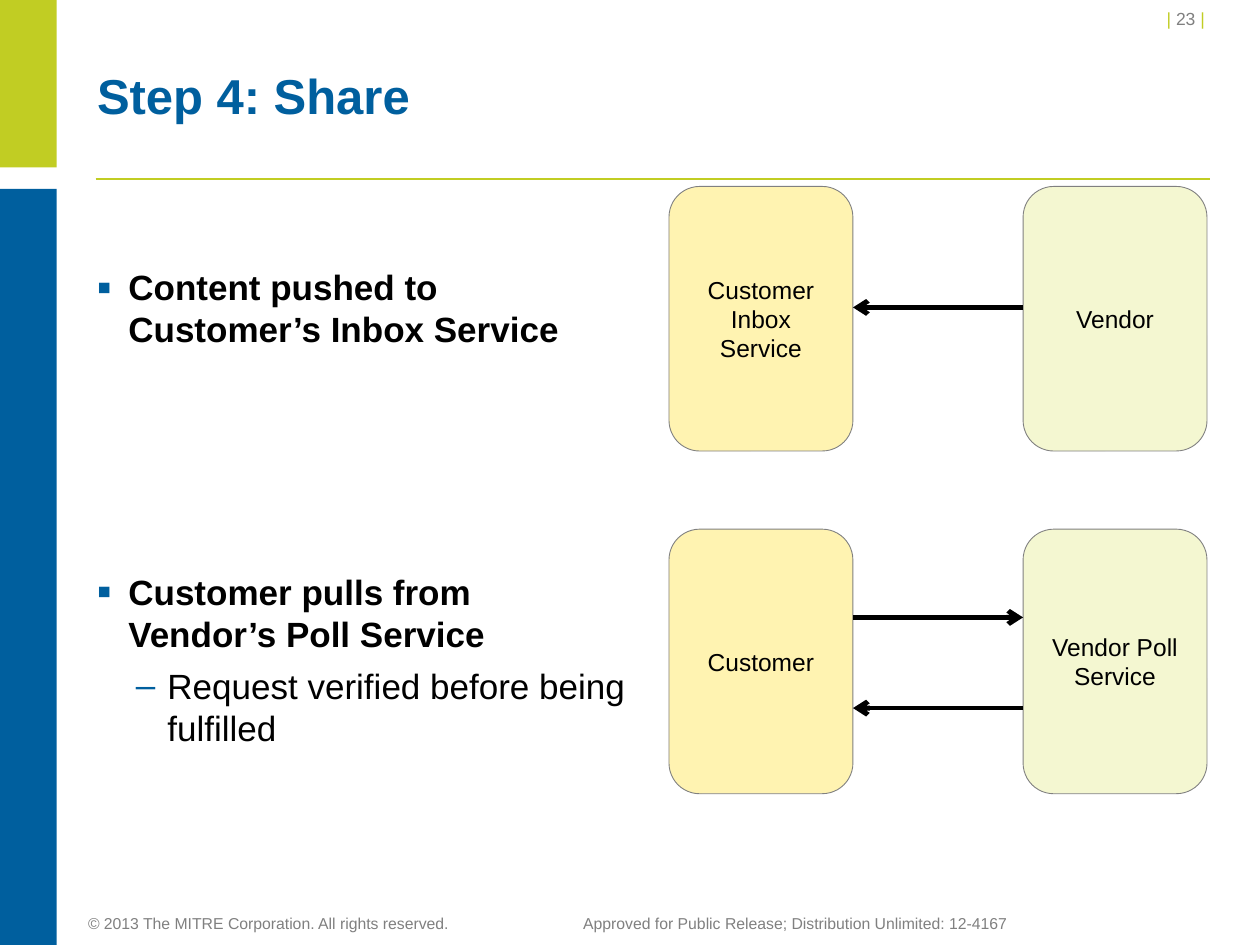
from lxml.etree import SubElement
from pptx import Presentation
from pptx.dml.color import RGBColor
from pptx.enum.shapes import MSO_CONNECTOR as Conn, MSO_SHAPE as Shape
from pptx.enum.text import MSO_ANCHOR as Anchor, PP_ALIGN as Align
from pptx.oxml.ns import qn
from pptx.util import Inches, Pt

LIME = RGBColor(0xC1, 0xCD, 0x23)
BLUE = RGBColor(0x00, 0x5F, 0x9E)
GREY = RGBColor(0x80, 0x80, 0x80)
BLACK = RGBColor(0x00, 0x00, 0x00)
CREAM = RGBColor(0xFF, 0xF3, 0xB1)
PALE = RGBColor(0xF4, 0xF7, 0xD1)

TITLE = "Step 4: Share"
PAGE = [("| ", LIME), ("23 ", GREY), ("|", LIME)]
FOOTER = ("© 2013 The MITRE Corporation. All rights reserved.\t"
          "Approved for Public Release; Distribution Unlimited: 12-4167")
BULLETS = [
    ("Content pushed to Customer’s Inbox Service", 0, 0),
    ("Customer pulls from Vendor’s Poll Service", 0, 120),
    ("Request verified before being fulfilled", 1, 0),
]
LEVELS = [("▪", 120, 0.25, True), ("–", 100, 0.56, False)]
BANDS = [(0, 1.33, LIME), (1.5, 6, BLUE)]
ROWS = [
    (1.48, "Customer Inbox Service", "Vendor", [(0.96, False)]),
    (4.2, "Customer", "Vendor Poll Service", [(0.7, True), (1.42, False)]),
]
LEFT, RIGHT, WIDE, HIGH = 5.31, 8.12, 1.46, 2.1


def style(font, size, color, bold=False):
    font.name, font.size, font.bold = "Arial", Pt(size), bold
    font.color.rgb = color


def add_text(slide, x, y, w, h, anchor=Anchor.TOP):
    box = slide.shapes.add_textbox(*map(Inches, (x, y, w, h)))
    frame = box.text_frame
    frame.word_wrap = True
    frame.vertical_anchor = anchor
    return frame


def add_box(slide, kind, x, y, w, h, fill):
    box = slide.shapes.add_shape(kind, *map(Inches, (x, y, w, h)))
    box.shadow.inherit = False
    box.fill.solid()
    box.fill.fore_color.rgb = fill
    box.line.fill.background()
    return box


def add_node(slide, x, y, text, fill, pad):
    box = add_box(slide, Shape.ROUNDED_RECTANGLE, x, y, WIDE, HIGH, fill)
    box.line.color.rgb = GREY
    box.line.width = Pt(0.5)
    frame = box.text_frame
    frame.text = text
    frame.word_wrap = True
    frame.vertical_anchor = Anchor.MIDDLE
    frame.margin_left = frame.margin_right = Inches(pad)
    para = frame.paragraphs[0]
    para.alignment = Align.CENTER
    style(para.runs[0].font, 14, BLACK)


def add_line(slide, start, end, y, color, width, arrow=False):
    line = slide.shapes.add_connector(
        Conn.STRAIGHT, *map(Inches, (start, y, end, y)))
    line.line.color.rgb = color
    line.line.width = Pt(width)
    props = line._element.spPr
    SubElement(props, qn("a:effectLst"))
    if arrow:
        SubElement(props.find(qn("a:ln")), qn("a:tailEnd"), type="arrow")


def add_bullet(para, text, level, before):
    mark, scale, indent, bold = LEVELS[level]
    para.text = text
    para.level = level
    props = para._p.get_or_add_pPr()
    props.set("marL", str(Inches(indent)))
    props.set("indent", str(Inches(-0.25)))
    color = SubElement(props, qn("a:buClr"))
    SubElement(color, qn("a:srgbClr"), val=str(BLUE))
    SubElement(props, qn("a:buSzPct"), val=str(scale * 1000))
    SubElement(props, qn("a:buFont"), typeface="Arial")
    SubElement(props, qn("a:buChar"), char=mark)
    para.line_spacing = Pt(24)
    para.space_after = Pt(6)
    if before:
        para.space_before = Pt(before)
    style(para.runs[0].font, 20, BLACK, bold)


def main():
    deck = Presentation()
    deck.slide_width, deck.slide_height = Inches(10), Inches(7.5)
    slide = deck.slides.add_slide(deck.slide_layouts[5])

    for y, h, fill in BANDS:
        add_box(slide, Shape.RECTANGLE, 0, y, 0.45, h, fill)
    add_line(slide, 0.76, 9.6, 1.42, LIME, 1)

    title = slide.shapes.title
    title.left, title.top, title.width, title.height = map(
        Inches, (0.67, 0.25, 9, 1.03))
    title.text_frame.text = TITLE
    title.text_frame.vertical_anchor = Anchor.MIDDLE
    para = title.text_frame.paragraphs[0]
    para.alignment = Align.LEFT
    para.line_spacing = Pt(32)
    style(para.runs[0].font, 28, BLUE, True)

    frame = add_text(slide, 0.67, 2.06, 4.42, 4.53)
    for i, item in enumerate(BULLETS):
        para = frame.add_paragraph() if i else frame.paragraphs[0]
        add_bullet(para, *item)

    for y, client, vendor, arrows in ROWS:
        add_node(slide, LEFT, y, client, CREAM, 0.1)
        add_node(slide, RIGHT, y, vendor, PALE, 0)
        for drop, forward in arrows:
            ends = (LEFT + WIDE, RIGHT) if forward else (RIGHT, LEFT + WIDE)
            add_line(slide, *ends, y + drop, BLACK, 2.75, True)

    para = add_text(slide, 9.12, 0.08, 0.54, 0.2, Anchor.BOTTOM).paragraphs[0]
    para.alignment = Align.RIGHT
    for text, color in PAGE:
        run = para.add_run()
        run.text = text
        style(run.font, 10, color)

    para = add_text(slide, 0.6, 7.15, 7.58, 0.3, Anchor.BOTTOM).paragraphs[0]
    para.text = FOOTER
    tabs = SubElement(para._p.get_or_add_pPr(), qn("a:tabLst"))
    SubElement(tabs, qn("a:tab"), pos=str(Inches(3.93)), algn="l")
    para.line_spacing = Pt(13)
    for run in para.runs:
        style(run.font, 9, GREY)

    deck.save("out.pptx")


if __name__ == "__main__":
    main()
